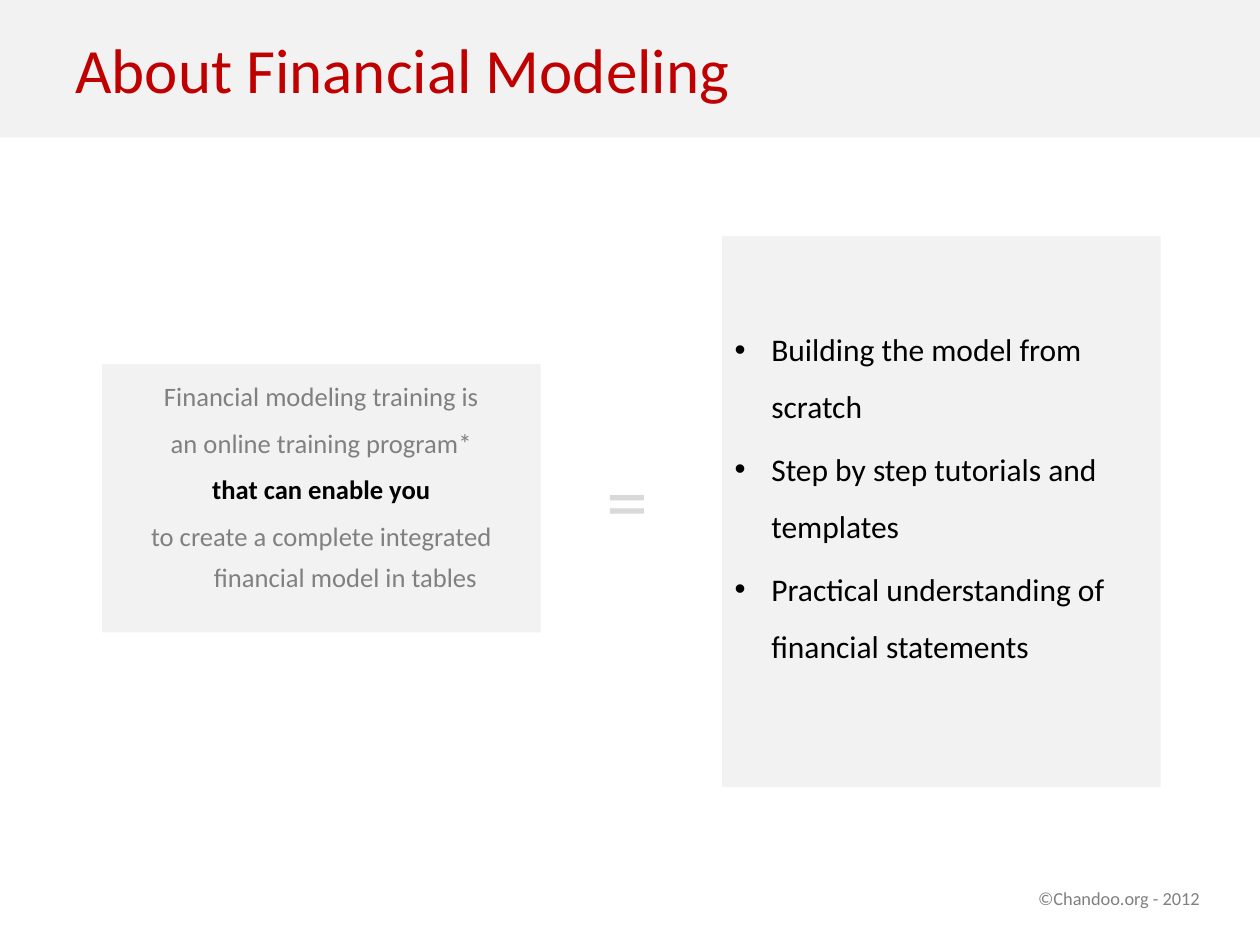
"""Build the slide about financial modeling training."""
from dataclasses import dataclass

import lxml.etree
import pptx
import pptx.dml.color
import pptx.enum.shapes
import pptx.enum.text
import pptx.oxml.ns
import pptx.util

Cm = pptx.util.Cm
Pt = pptx.util.Pt
ALIGN = pptx.enum.text.PP_ALIGN
ANCHOR = pptx.enum.text.MSO_ANCHOR
COLORS = {
    "panel": "F2F2F2",
    "title": "C00000",
    "gray": "808080",
    "black": "000000",
    "sign": "D9D9D9",
}


@dataclass
class Box:
    left: float
    top: float
    width: float
    height: float


@dataclass
class Line:
    text: str
    color: str = "black"
    bold: bool = False


def tint(name: str) -> pptx.dml.color.RGBColor:
    """Return the named color."""
    return pptx.dml.color.RGBColor.from_string(COLORS[name])


def place(box: Box) -> tuple:
    """Return the box as lengths."""
    return Cm(box.left), Cm(box.top), Cm(box.width), Cm(box.height)


def add_panel(slide, box: Box):
    """Draw a plain gray panel."""
    panel = slide.shapes.add_shape(pptx.enum.shapes.MSO_SHAPE.RECTANGLE, *place(box))
    panel.shadow.inherit = False
    panel.fill.solid()
    panel.fill.fore_color.rgb = tint("panel")
    panel.line.fill.background()
    return panel


def add_label(slide, box: Box, line: Line, size: float, **style) -> None:
    """Draw a text box that holds one line."""
    write(slide.shapes.add_textbox(*place(box)), [line], size, **style)


def write(shape, lines: list[Line], size: float, *, align=ALIGN.LEFT,
          anchor=ANCHOR.TOP, wrap: bool = True, indent: float = 0,
          spacing: float = 1, before: float = 0, bullet: str = "",
          bottom: float = 0.13) -> None:
    """Fill a shape with lines of text in the given format."""
    frame = shape.text_frame
    frame.word_wrap = wrap
    frame.vertical_anchor = anchor
    frame.margin_bottom = Cm(bottom)
    for index, line in enumerate(lines):
        para = frame.add_paragraph() if index else frame.paragraphs[0]
        para.alignment = align
        para.line_spacing = spacing
        para.space_before = Pt(before if index else 0)
        props = para._p.get_or_add_pPr()
        props.set("marL", str(Cm(indent)))
        props.set("indent", str(-Cm(indent)))
        if bullet:
            qn = pptx.oxml.ns.qn
            lxml.etree.SubElement(props, qn("a:buFont")).set("typeface", "Arial")
            lxml.etree.SubElement(props, qn("a:buChar")).set("char", bullet)
        run = para.add_run()
        run.text = line.text
        run.font.name = "Calibri"
        run.font.size = Pt(size)
        run.font.bold = line.bold
        run.font.color.rgb = tint(line.color)


def main() -> None:
    """Draw the slide and save it."""
    deck = pptx.Presentation()
    deck.slide_width, deck.slide_height = Cm(25.4), Cm(19.05)
    slide = deck.slides.add_slide(deck.slide_layouts[6])

    add_panel(slide, Box(0, 0, 25.4, 2.77))
    add_label(slide, Box(20.68, 17.75, 3.84, 0.71),
              Line("©Chandoo.org - 2012", "gray"), 10.5, wrap=False)
    add_label(slide, Box(1.27, 0, 22.86, 2.77),
              Line("About Financial Modeling", "title"), 36, anchor=ANCHOR.MIDDLE)

    pitch = [
        Line("Financial modeling training is", "gray"),
        Line("an online training program*", "gray"),
        Line("that can enable you", bold=True),
        Line("to create a complete integrated financial model in tables", "gray"),
    ]
    write(add_panel(slide, Box(2.06, 7.34, 8.84, 5.41)), pitch, 15.2,
          align=ALIGN.CENTER, indent=0.97, spacing=1.3, before=3)

    gains = [
        Line("Building the model from scratch"),
        Line("Step by step tutorials and templates"),
        Line("Practical understanding of financial statements"),
    ]
    write(add_panel(slide, Box(14.56, 4.76, 8.84, 11.11)), gains, 18,
          anchor=ANCHOR.MIDDLE, indent=0.74, spacing=1.5, before=3.6,
          bullet="•", bottom=1.08)

    add_label(slide, Box(11.97, 8.89, 1.37, 2.31), Line("=", "sign"), 48, wrap=False)
    deck.save("out.pptx")


if __name__ == "__main__":
    main()
